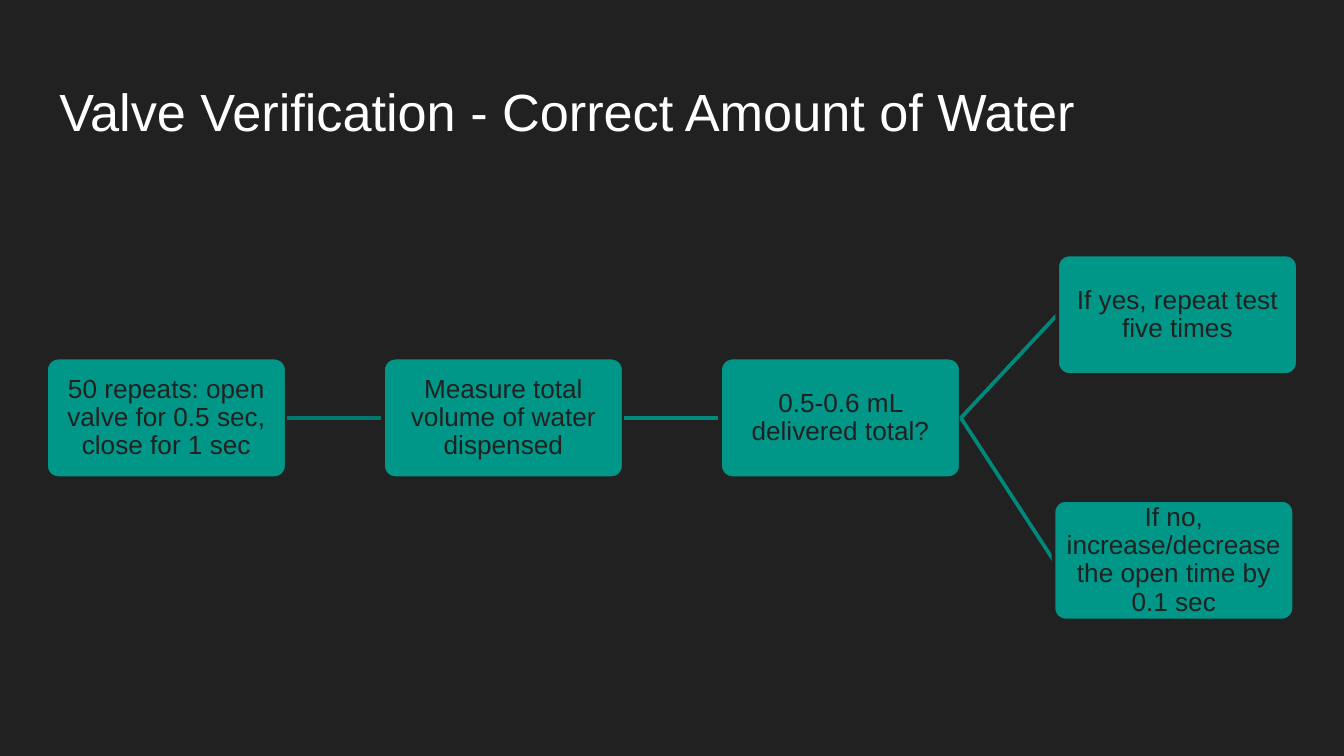
from lxml import etree
from pptx import Presentation
from pptx.dml.color import RGBColor
from pptx.enum.shapes import MSO_CONNECTOR, MSO_SHAPE
from pptx.enum.text import MSO_ANCHOR, MSO_AUTO_SIZE, PP_ALIGN
from pptx.oxml.ns import qn
from pptx.util import Cm, Pt

STRAIGHT = MSO_CONNECTOR.STRAIGHT
ROUNDED = MSO_SHAPE.ROUNDED_RECTANGLE
TOP, MIDDLE = MSO_ANCHOR.TOP, MSO_ANCHOR.MIDDLE
LEFT, CENTER = PP_ALIGN.LEFT, PP_ALIGN.CENTER
LEFT_SIDE, RIGHT_SIDE = 1, 3

# Content: text, column, top (cm), shift (cm), index of previous step, link colour
TITLE = "Valve Verification - Correct Amount of Water"
STEPS = [
    ("50 repeats: open valve for 0.5 sec, close for 1 sec", 0, 6.76, 0, None, None),
    ("Measure total volume of water dispensed", 1, 6.76, 0, 0, "link_dark"),
    ("0.5-0.6 mL delivered total?", 2, 6.76, 0, 1, "link"),
    ("If yes, repeat test five times", 3, 4.81, 0, 2, "link"),
    ("If no, increase/decrease the open time by 0.1 sec", 3, 9.45, -0.07, 2, "link"),
]
COLORS = {
    "background": "212121",
    "title": "FFFFFF",
    "box": "009688",
    "link_dark": "00786D",
    "link": "00887B",
}

# Layout in cm
FIRST_LEFT, COLUMN_STEP = 0.87, 6.37
BOX_WIDTH, BOX_HEIGHT = 4.55, 2.28


def color(name):
    return RGBColor.from_string(COLORS[name])


def write_text(shape, text, size, font_color, align=LEFT, anchor=TOP,
               margin=0.25, line_spacing=1.0):
    frame = shape.text_frame
    frame.word_wrap = True
    frame.auto_size = MSO_AUTO_SIZE.NONE
    frame.vertical_anchor = anchor
    frame.margin_left = frame.margin_right = Cm(margin)
    frame.margin_top = frame.margin_bottom = Cm(margin)
    paragraph = frame.paragraphs[0]
    paragraph.alignment = align
    paragraph.line_spacing = line_spacing
    paragraph.space_before = Pt(0)
    run = paragraph.add_run()
    run.text = text
    run.font.name = "Arial"
    run.font.size = Pt(size)
    run.font.color.rgb = color(font_color)


def add_box(slide, text, left, top):
    box = slide.shapes.add_shape(ROUNDED, Cm(left), Cm(top), Cm(BOX_WIDTH), Cm(BOX_HEIGHT))
    box.adjustments[0] = 0.1
    box.shadow.inherit = False
    box.fill.solid()
    box.fill.fore_color.rgb = color("box")
    box.line.color.rgb = color("background")
    box.line.width = Pt(2)
    write_text(box, text, 14, "background", align=CENTER, anchor=MIDDLE,
               margin=0.03, line_spacing=0.9)
    return box


def add_link(slide, source, line_color):
    link = slide.shapes.add_connector(STRAIGHT, 0, 0, 0, 0)
    link.line.color.rgb = color(line_color)
    link.line.width = Pt(2)
    etree.SubElement(link._element.spPr, qn("a:effectLst"))
    link.begin_connect(source, RIGHT_SIDE)
    return link


def main():
    presentation = Presentation()
    presentation.slide_width, presentation.slide_height = Cm(25.4), Cm(14.29)
    slide = presentation.slides.add_slide(presentation.slide_layouts[5])
    slide.background.fill.solid()
    slide.background.fill.fore_color.rgb = color("background")

    # Title
    title = slide.shapes.title
    title.left, title.top, title.width, title.height = Cm(0.87), Cm(1.24), Cm(22.3), Cm(1.6)
    write_text(title, TITLE, 28, "title")

    # Flow: each link lies over its source box and under its target box
    boxes = []
    for text, column, top, shift, previous, link_color in STEPS:
        link = None
        if previous is not None:
            link = add_link(slide, boxes[previous], link_color)
        box = add_box(slide, text, FIRST_LEFT + column * COLUMN_STEP + shift, top)
        if link is not None:
            link.end_connect(box, LEFT_SIDE)
        boxes.append(box)

    presentation.save("out.pptx")


if __name__ == "__main__":
    main()
